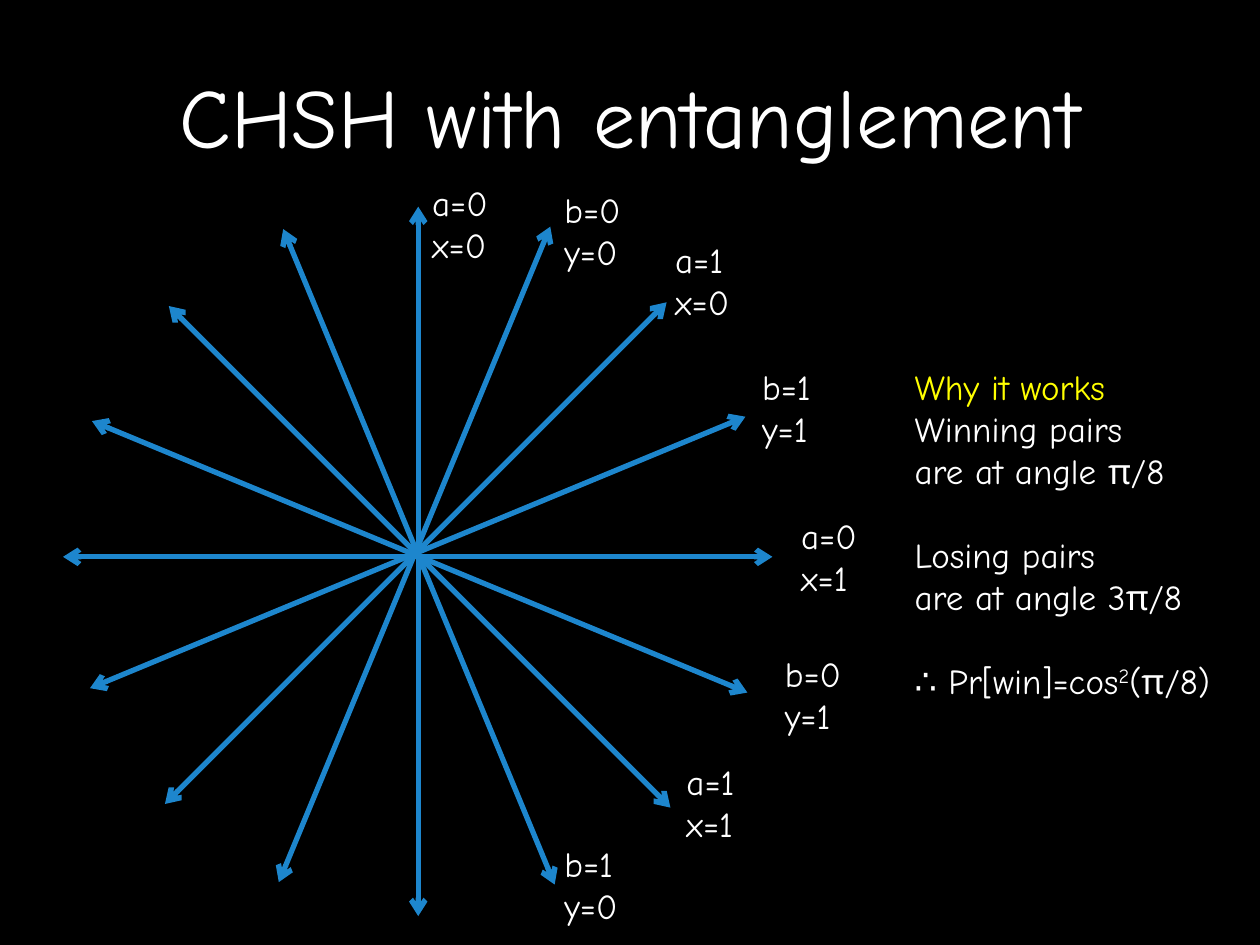
from math import cos, radians, sin

from lxml.etree import SubElement
from pptx import Presentation
from pptx.dml.color import RGBColor
from pptx.enum.shapes import MSO_CONNECTOR as Connector
from pptx.enum.text import MSO_ANCHOR as Anchor, MSO_AUTO_SIZE as AutoSize, PP_ALIGN as Align
from pptx.oxml.ns import qn
from pptx.util import Pt

THEME = {
    "font": "Comic Neue",
    "background": RGBColor(0x00, 0x00, 0x00),
    "text": RGBColor(0xFF, 0xFF, 0xFF),
    "heading": RGBColor(0xFF, 0xFF, 0x00),
    "axis": RGBColor(0x1D, 0x86, 0xCD),
    "title_size": 48,
    "body_size": 20,
    "axis_width": 3,
}

TITLE = "CHSH with entanglement"
TITLE_FRAME = (54, 9.4, 612, 112.3)

# One axis every pi/8, clockwise from horizontal: the centre of each
AXIS_CENTRES = [
    (238.7, 318.2), (239.8, 318.2), (239.8, 318.2), (239.4, 318.2),
    (239, 320.8), (236.9, 316.8), (237.6, 316.1), (238.7, 315.7),
]
AXIS_STEP = 22.5
AXIS_REACH = 202.7

# Answer, question, left, top
OUTCOMES = [
    ("a=0", "x=0", 239.8, 100.1),
    ("b=0", "y=0", 315.4, 104.4),
    ("a=1", "x=0", 378.7, 132.5),
    ("b=1", "y=1", 428.4, 205.2),
    ("a=0", "x=1", 450.7, 290.2),
    ("b=0", "y=1", 441.4, 369.4),
    ("a=1", "x=1", 385.2, 431.3),
    ("b=1", "y=0", 315.4, 478.1),
]
OUTCOME_SIZE = (47, 55.4)

# Groups of lines; a group is set off from the one before by a gap
REASONS = [
    ["Why it works", "Winning pairs", "are at angle π/8"],
    ["Losing pairs", "are at angle 3π/8"],
    ["∴ Pr[win]=cos"],
]
EXPONENT, ARGUMENT = "2", "(π/8)"
REASONS_FRAME = (515.5, 205.2, 195.8, 200.9)
REASONS_GAP = 24


def style(paragraph, size, color=THEME["text"]):
    for run in paragraph.runs:
        run.font.name = THEME["font"]
        run.font.size = Pt(size)
        run.font.color.rgb = color


def add_text(slide, frame, text):
    box = slide.shapes.add_textbox(*map(Pt, frame)).text_frame
    box.text = text
    box.word_wrap = False
    box.auto_size = AutoSize.SHAPE_TO_FIT_TEXT
    for paragraph in box.paragraphs:
        style(paragraph, THEME["body_size"])
    return box


def add_title(slide):
    title = add_text(slide, TITLE_FRAME, TITLE)
    title.auto_size = AutoSize.NONE
    title.word_wrap = True
    title.vertical_anchor = Anchor.MIDDLE
    title.paragraphs[0].alignment = Align.CENTER
    style(title.paragraphs[0], THEME["title_size"])


def add_axis(slide, centre, degrees):
    x, y = centre
    dx = AXIS_REACH * cos(radians(degrees))
    dy = AXIS_REACH * sin(radians(degrees))
    ends = (x - dx, y - dy, x + dx, y + dy)
    axis = slide.shapes.add_connector(Connector.STRAIGHT, *map(Pt, ends))
    axis.line.color.rgb = THEME["axis"]
    axis.line.width = Pt(THEME["axis_width"])
    outline = axis.line._get_or_add_ln()
    for end in ("a:headEnd", "a:tailEnd"):
        SubElement(outline, qn(end), type="arrow")
    SubElement(axis._element.spPr, qn("a:effectLst"))


def add_reasons(slide):
    lines = [line for group in REASONS for line in group]
    reasons = add_text(slide, REASONS_FRAME, "\n".join(lines))
    style(reasons.paragraphs[0], THEME["body_size"], THEME["heading"])

    first_line = 0
    for group in REASONS[:-1]:
        first_line += len(group)
        reasons.paragraphs[first_line].space_before = Pt(REASONS_GAP)

    conclusion = reasons.paragraphs[-1]
    exponent = conclusion.add_run()
    exponent.text = EXPONENT
    exponent._r.get_or_add_rPr().set("baseline", "30000")
    conclusion.add_run().text = ARGUMENT
    style(conclusion, THEME["body_size"])


def main():
    deck = Presentation()
    deck.slide_width, deck.slide_height = Pt(720), Pt(540)
    slide = deck.slides.add_slide(deck.slide_layouts[6])
    slide.background.fill.solid()
    slide.background.fill.fore_color.rgb = THEME["background"]

    add_title(slide)
    for step, centre in enumerate(AXIS_CENTRES):
        add_axis(slide, centre, step * AXIS_STEP)
    for answer, question, left, top in OUTCOMES:
        add_text(slide, (left, top, *OUTCOME_SIZE), f"{answer}\n{question}")
    add_reasons(slide)
    deck.save("out.pptx")


if __name__ == "__main__":
    main()
